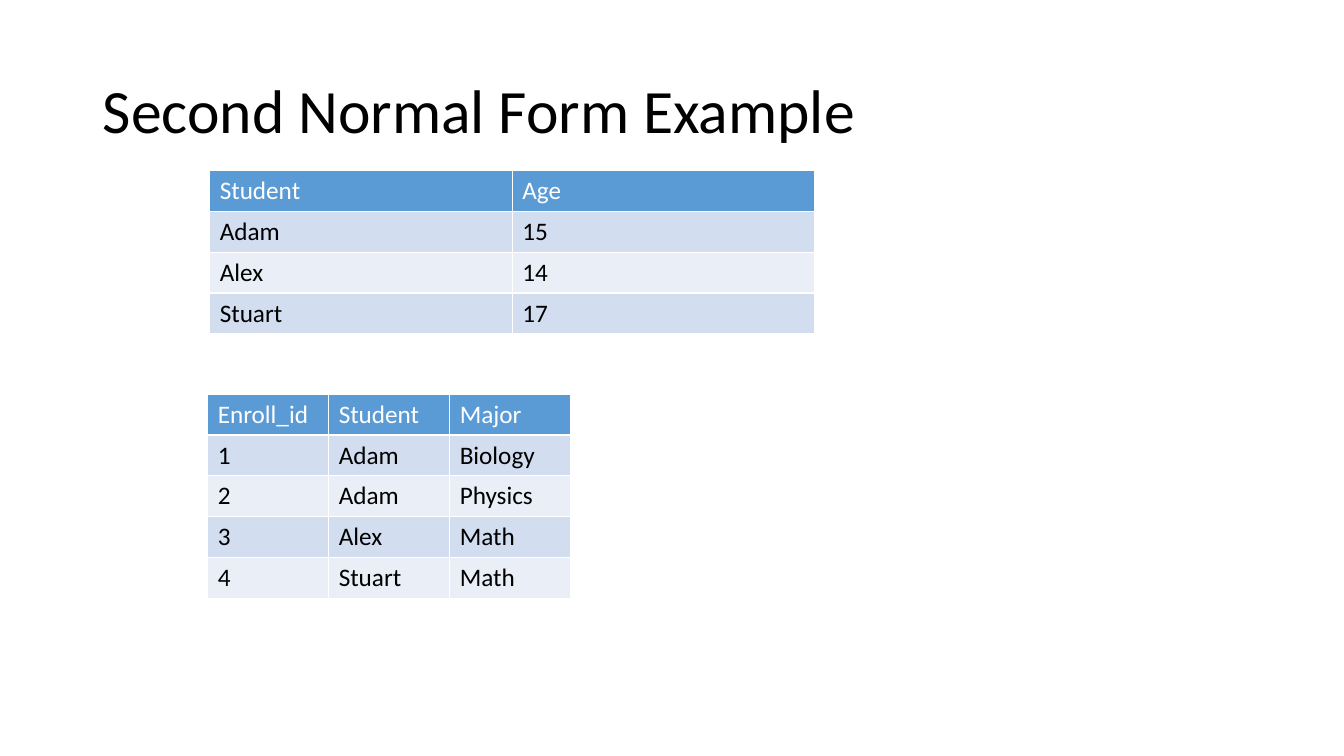
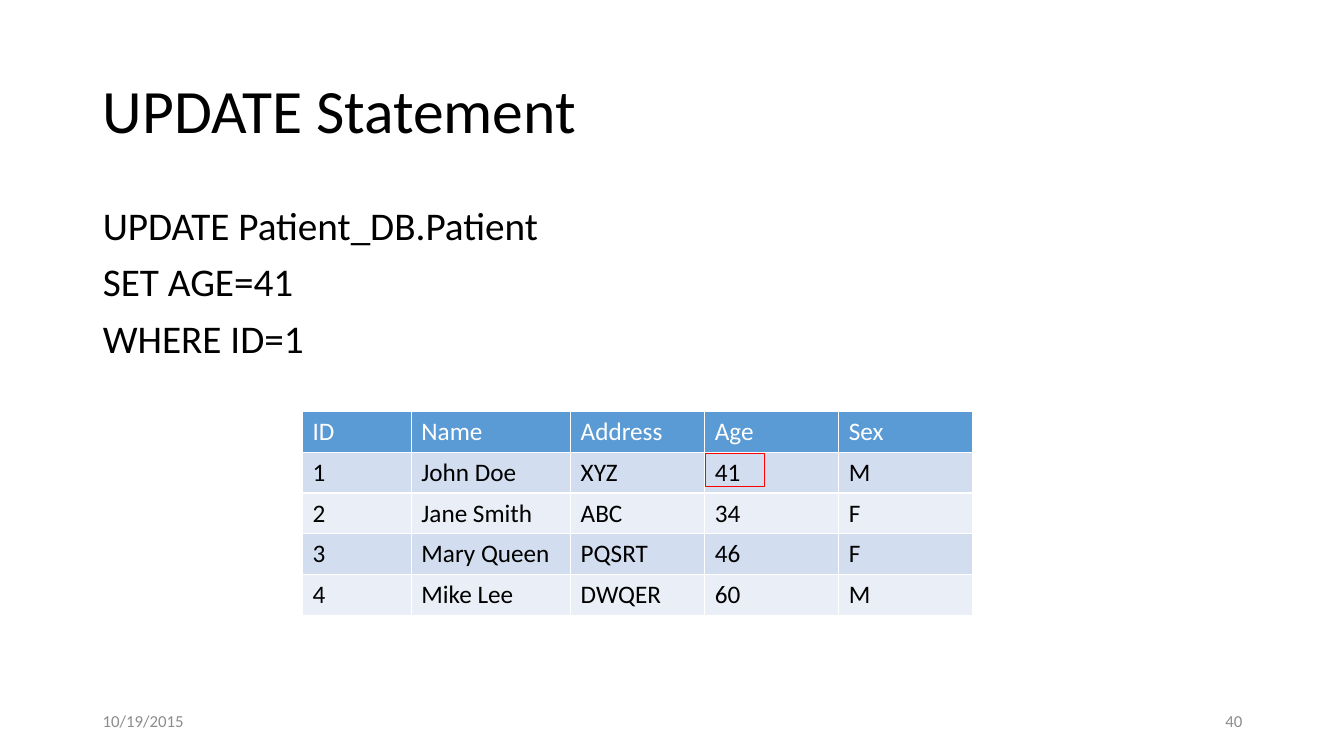
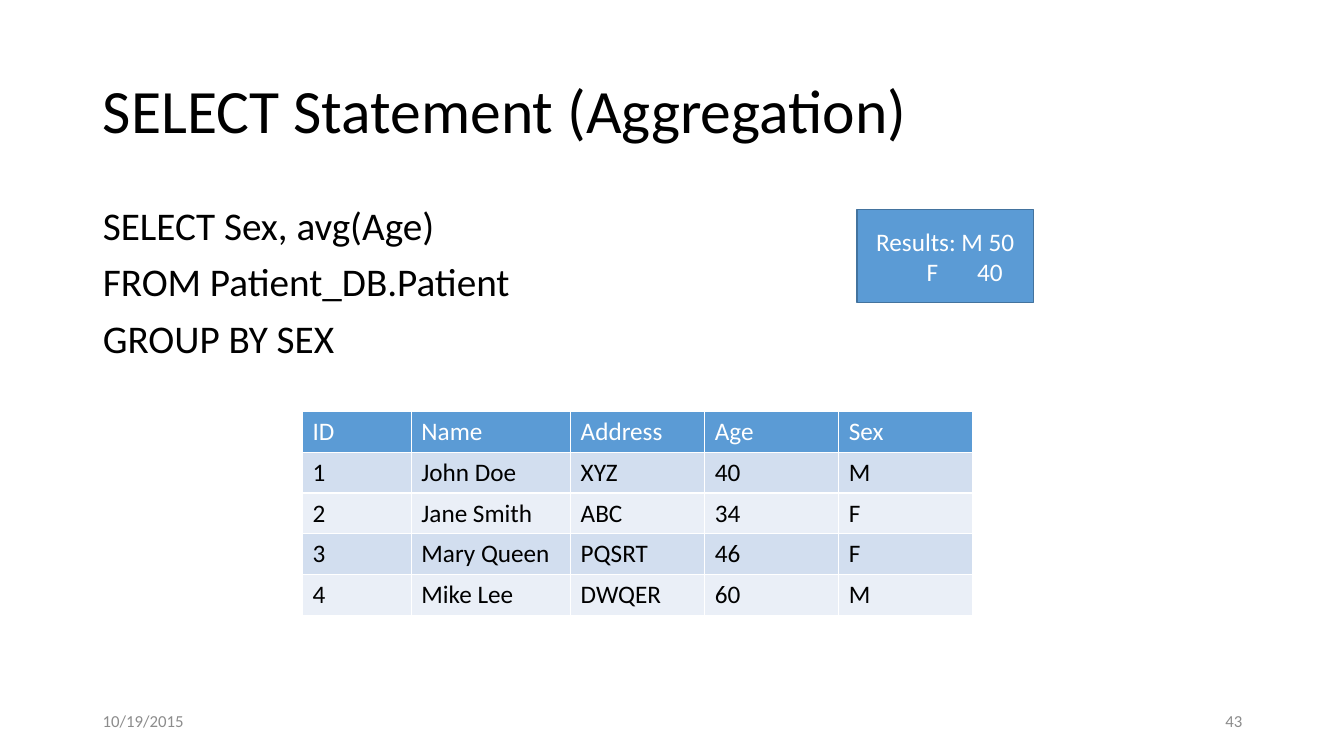
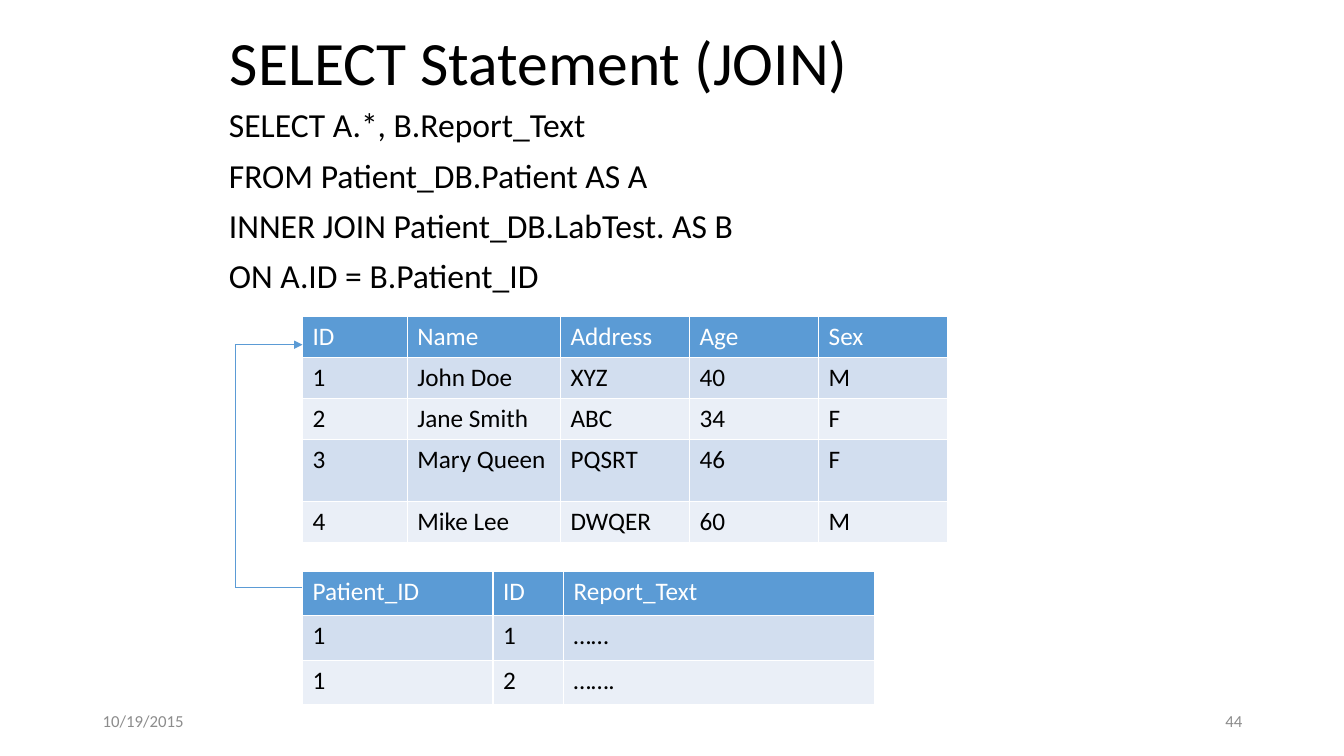
from dataclasses import dataclass
from itertools import pairwise

from lxml.etree import SubElement
from pptx import Presentation
from pptx.dml.color import RGBColor
from pptx.enum.shapes import MSO_CONNECTOR, MSO_SHAPE
from pptx.enum.text import MSO_ANCHOR, MSO_AUTO_SIZE, PP_ALIGN
from pptx.oxml.ns import qn
from pptx.util import Inches, Pt


@dataclass(frozen=True)
class Theme:
    font: str = "Calibri"
    ink: str = "000000"
    paper: str = "FFFFFF"
    accent: str = "5B9BD5"
    accent_edge: str = "43739E"
    bands: tuple = ("D2DEEF", "EAEFF7")
    muted: str = "8C8C8C"
    alert: str = "FF0000"
    title_size: int = 44
    body_size: int = 28
    compact_size: int = 24
    table_size: int = 18
    footer_size: int = 12


THEME = Theme()
TITLE_AREA = (0.92, 0.4, 11.5, 1.45)
BODY_AREA = (0.92, 2, 11.5, 4.76)
ROW_HEIGHT = 0.4
PATIENT_COLUMNS = (1.08, 1.58, 1.33, 1.33, 1.33)
JOIN_COLUMNS = (1.04, 1.52, 1.28, 1.28, 1.28)


def color(code):
    return RGBColor.from_string(code)


def write(frame, text, size, ink=THEME.ink, align=PP_ALIGN.LEFT,
          anchor=MSO_ANCHOR.TOP, spacing=1, before=0, tabs=()):
    frame.word_wrap = True
    frame.auto_size = MSO_AUTO_SIZE.NONE
    frame.vertical_anchor = anchor
    frame.text = text
    for paragraph in frame.paragraphs:
        paragraph.alignment = align
        paragraph.line_spacing = spacing
        paragraph.space_before = Pt(before)
        properties = paragraph._p.get_or_add_pPr()
        properties.set("marL", "0")
        properties.set("indent", "0")
        SubElement(properties, qn("a:buNone"))
        if tabs:
            stops = SubElement(properties, qn("a:tabLst"))
            for position in tabs:
                SubElement(stops, qn("a:tab"), pos=str(Inches(position)), algn="l")
        for run in paragraph.runs:
            run.font.name = THEME.font
            run.font.size = Pt(size)
            run.font.bold = False
            run.font.color.rgb = color(ink)


def place(shape, area):
    shape.left, shape.top, shape.width, shape.height = map(Inches, area)


def add_slide(deck, title, statement=None, title_area=TITLE_AREA,
              body_area=BODY_AREA, body_size=THEME.body_size):
    slide = deck.slides.add_slide(deck.slide_layouts[1 if statement else 5])
    place(slide.shapes.title, title_area)
    write(slide.shapes.title.text_frame, title, THEME.title_size,
          anchor=MSO_ANCHOR.MIDDLE, spacing=0.9)
    if statement:
        body = slide.placeholders[1]
        place(body, body_area)
        write(body.text_frame, "\n".join(statement), body_size,
              spacing=0.9, before=10)
    return slide


def add_footer(slide, number):
    for left, text, align in ((0.92, "10/19/2015", PP_ALIGN.LEFT),
                              (9.42, str(number), PP_ALIGN.RIGHT)):
        box = slide.shapes.add_textbox(
            Inches(left), Inches(6.95), Inches(3), Inches(0.4))
        write(box.text_frame, text, THEME.footer_size, ink=THEME.muted,
              align=align, anchor=MSO_ANCHOR.MIDDLE)


def add_grid(slide, left, top, columns, records, heights=None,
             anchor=MSO_ANCHOR.TOP):
    heights = heights or [ROW_HEIGHT] * len(records)
    table = slide.shapes.add_table(
        len(records), len(columns), Inches(left), Inches(top),
        Inches(sum(columns)), Inches(sum(heights))).table
    for column, width in zip(table.columns, columns):
        column.width = Inches(width)
    for index, (row, height, record) in enumerate(zip(table.rows, heights, records)):
        row.height = Inches(height)
        fill = THEME.bands[(index - 1) % 2] if index else THEME.accent
        ink = THEME.ink if index else THEME.paper
        for cell, value in zip(row.cells, record):
            cell.fill.solid()
            cell.fill.fore_color.rgb = color(fill)
            write(cell.text_frame, value, THEME.table_size, ink=ink)
            cell.vertical_anchor = anchor


def add_box(slide, area, line, fill=None):
    box = slide.shapes.add_shape(MSO_SHAPE.RECTANGLE, *map(Inches, area))
    box.shadow.inherit = False
    box.line.color.rgb = color(line)
    box.line.width = Pt(1)
    if fill:
        box.fill.solid()
        box.fill.fore_color.rgb = color(fill)
    else:
        box.fill.background()
    return box


def add_arrow_route(slide, points):
    for start, end in pairwise(points):
        segment = slide.shapes.add_connector(
            MSO_CONNECTOR.STRAIGHT, *map(Inches, start + end))
        segment.line.color.rgb = color(THEME.accent)
        segment.line.width = Pt(0.5)
        SubElement(segment._element.spPr, qn("a:effectLst"))
    SubElement(segment.line._get_or_add_ln(), qn("a:tailEnd"), type="triangle")


def patients(john_age="40"):
    return (("ID", "Name", "Address", "Age", "Sex"),
            ("1", "John Doe", "XYZ", john_age, "M"),
            ("2", "Jane Smith", "ABC", "34", "F"),
            ("3", "Mary Queen", "PQSRT", "46", "F"),
            ("4", "Mike Lee", "DWQER", "60", "M"))


def add_normal_form(deck):
    slide = add_slide(deck, "Second Normal Form Example")
    add_grid(slide, 2.08, 1.69, (3, 3), (
        ("Student", "Age"), ("Adam", "15"), ("Alex", "14"), ("Stuart", "17"),
    ), anchor=MSO_ANCHOR.MIDDLE)
    add_grid(slide, 2.06, 3.91, (1.2, 1.2, 1.2), (
        ("Enroll_id", "Student", "Major"),
        ("1", "Adam", "Biology"),
        ("2", "Adam", "Physics"),
        ("3", "Alex", "Math"),
        ("4", "Stuart", "Math"),
    ), anchor=MSO_ANCHOR.MIDDLE)


def add_update(deck):
    slide = add_slide(deck, "UPDATE Statement", (
        "UPDATE Patient_DB.Patient", "SET AGE=41", "WHERE ID=1"))
    add_grid(slide, 3, 4.08, PATIENT_COLUMNS, patients(john_age="41"))
    add_footer(slide, 40)
    add_box(slide, (7, 4.5, 0.58, 0.33), THEME.alert)


def add_aggregation(deck):
    slide = add_slide(deck, "SELECT Statement (Aggregation)", (
        "SELECT Sex, avg(Age)", "FROM Patient_DB.Patient", "GROUP BY SEX"))
    add_footer(slide, 43)
    add_grid(slide, 3, 4.08, PATIENT_COLUMNS, patients())
    results = add_box(slide, (8.5, 2.08, 1.75, 0.92), THEME.accent_edge,
                      fill=THEME.accent)
    results.text_frame.margin_left = Inches(0.19)
    write(results.text_frame, "Results: M 50\n\tF\t40", THEME.table_size,
          ink=THEME.paper, anchor=MSO_ANCHOR.MIDDLE, tabs=(0.83, 1.12))


def add_join(deck):
    slide = add_slide(deck, "SELECT Statement (JOIN)", (
        "SELECT A.*, B.Report_Text",
        "FROM Patient_DB.Patient AS A",
        "INNER JOIN Patient_DB.LabTest. AS B",
        "ON A.ID = B.Patient_ID",
    ), title_area=(2.18, 0.03, 9, 1.25), body_area=(2.17, 1.03, 9, 4.95),
        body_size=THEME.compact_size)
    add_footer(slide, 44)
    add_grid(slide, 3, 3.14, JOIN_COLUMNS, patients(),
             heights=[ROW_HEIGHT] * 3 + [0.62, ROW_HEIGHT])
    add_grid(slide, 3, 5.67, (1.89, 0.7, 3.08), (
        ("Patient_ID", "ID", "Report_Text"),
        ("1", "1", "……"),
        ("1", "2", "……."),
    ), heights=[0.44] * 3)
    add_arrow_route(slide, ((3, 5.83), (2.33, 5.83), (2.33, 3.42), (3, 3.42)))


def main():
    deck = Presentation()
    deck.slide_width, deck.slide_height = Inches(13.33), Inches(7.5)
    add_normal_form(deck)
    add_update(deck)
    add_aggregation(deck)
    add_join(deck)
    deck.save("out.pptx")


if __name__ == "__main__":
    main()
